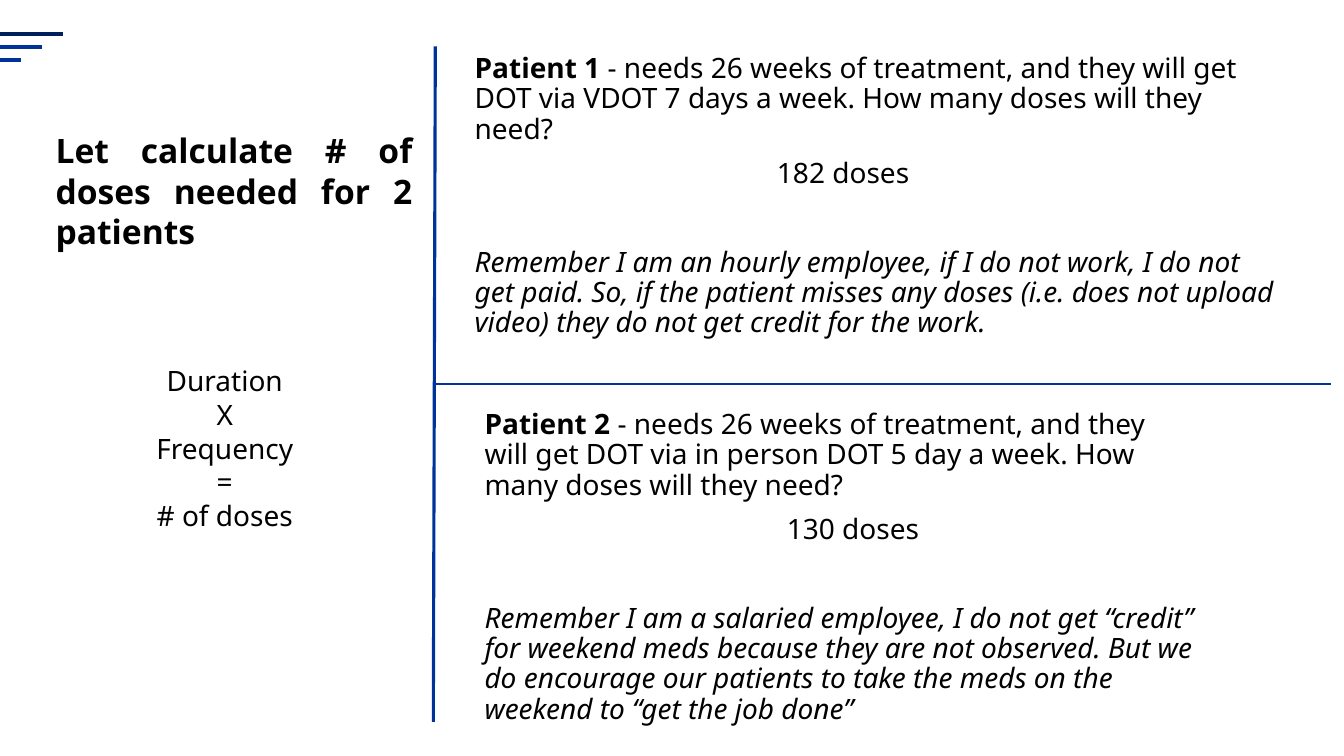
from dataclasses import dataclass

from pptx import Presentation, util as u
from pptx.dml.color import RGBColor
from pptx.enum import shapes, text
from pptx.oxml.ns import qn
from lxml import etree

HEADING = "Let calculate # of doses needed for 2 patients"
FORMULA = ["Duration", "X", "Frequency", "=", "# of doses"]
PATIENTS = [
    dict(
        name="Patient 1",
        question=" - needs 26 weeks of treatment, and they will get DOT via VDOT 7 days a week. "
                 "How many doses will they need?",
        answer="182 doses",
        reminder="Remember I am an hourly employee, if I do not work, I do not get paid. So, if the "
                 "patient misses any doses (i.e. does not upload video) they do not get credit for the work.",
        box=(11.96, 1.37, 20.47, 6.58), insets=(0, 0),
    ),
    dict(
        name="Patient 2",
        question=" - needs 26 weeks of treatment, and they will get DOT via in person DOT 5 day a week. "
                 "How many doses will they need?",
        answer="130 doses",
        reminder="Remember I am a salaried employee, I do not get “credit” for weekend meds because they "
                 "are not observed. But we do encourage our patients to take the meds on the weekend to "
                 "“get the job done”",
        box=(11.96, 10.21, 18.42, 8.26), insets=(0.25, 0.13),
    ),
]


@dataclass(frozen=True)
class Theme:
    font: str = "Noto Sans"
    ink: RGBColor = RGBColor(0, 0, 0)
    navy: RGBColor = RGBColor(0x00, 0x20, 0x5B)
    blue: RGBColor = RGBColor(0x00, 0x33, 0x99)
    heading: int = 24
    body: int = 20


THEME = Theme()


def place(holder, box, insets=(0, 0)):
    """Position a text holder in cm; insets are (side, top and bottom)."""
    holder.left, holder.top, holder.width, holder.height = map(u.Cm, box)
    frame = holder.text_frame
    frame.word_wrap = True
    frame.auto_size = text.MSO_AUTO_SIZE.NONE
    frame.vertical_anchor = text.MSO_ANCHOR.TOP
    frame.margin_left = frame.margin_right = u.Cm(insets[0])
    frame.margin_top = frame.margin_bottom = u.Cm(insets[1])
    return frame


def write(frame, *runs, size=THEME.body, align=text.PP_ALIGN.LEFT, indent=0, before=0, spacing=1.0):
    """Add a paragraph of (wording, font settings) runs, filling the empty first one."""
    first = frame.paragraphs[0]
    paragraph = frame.add_paragraph() if first.runs else first
    properties = paragraph._p.get_or_add_pPr()
    properties.set("marL", str(u.Cm(indent)))
    properties.set("indent", "0")
    etree.SubElement(properties, qn("a:buNone"))
    paragraph.alignment = align
    paragraph.line_spacing = spacing
    paragraph.space_before = u.Pt(before)
    for wording, style in runs:
        run = paragraph.add_run()
        run.text = wording
        run.font.name, run.font.size = THEME.font, u.Pt(size)
        run.font.color.rgb = THEME.ink
        run.font.bold = style.get("bold", False)
        run.font.italic = style.get("italic", False)


def draw_line(slide, x1, y1, x2, y2, colour, width):
    line = slide.shapes.add_connector(shapes.MSO_CONNECTOR.STRAIGHT, *map(u.Cm, (x1, y1, x2, y2)))
    line.line.color.rgb = colour
    line.line.width = u.Pt(width)
    etree.SubElement(line._element.spPr, qn("a:effectLst"))


def write_patient(holder, patient):
    frame = place(holder, patient["box"], patient["insets"])
    write(frame, (patient["name"], {"bold": True}), (patient["question"], {}), spacing=0.9)
    write(frame, (patient["answer"], {}), indent=7.62, before=10, spacing=0.9)
    write(frame, (patient["reminder"], {"italic": True}), before=42, spacing=0.9)


def main():
    deck = Presentation()
    deck.slide_width, deck.slide_height = u.Cm(33.87), u.Cm(19.05)
    slide = deck.slides.add_slide(deck.slide_layouts.get_by_name("Two Content"))

    for step, colour in enumerate((THEME.navy, THEME.blue, THEME.blue)):
        y = 0.86 + 0.33 * step
        draw_line(slide, 0.53 * (3 - step), y, 0, y, colour, 3)

    heading = place(slide.shapes.title, (1.4, 3.28, 8.99, 3.07))
    write(heading, (HEADING, {"bold": True}), size=THEME.heading, align=text.PP_ALIGN.JUSTIFY)

    formula_box = (1.4, 9.04, 8.53, 4.52)
    formula = place(slide.shapes.add_textbox(*map(u.Cm, formula_box)), formula_box, (0.25, 0.13))
    for term in FORMULA:
        write(formula, (term, {}), align=text.PP_ALIGN.CENTER)

    draw_line(slide, 10.97, 1.17, 10.92, 18.19, THEME.blue, 2.25)
    draw_line(slide, 10.97, 9.68, 33.55, 9.68, THEME.blue, 1)

    for position, patient in enumerate(PATIENTS, start=1):
        write_patient(slide.placeholders[position], patient)

    deck.save("out.pptx")


if __name__ == "__main__":
    main()
